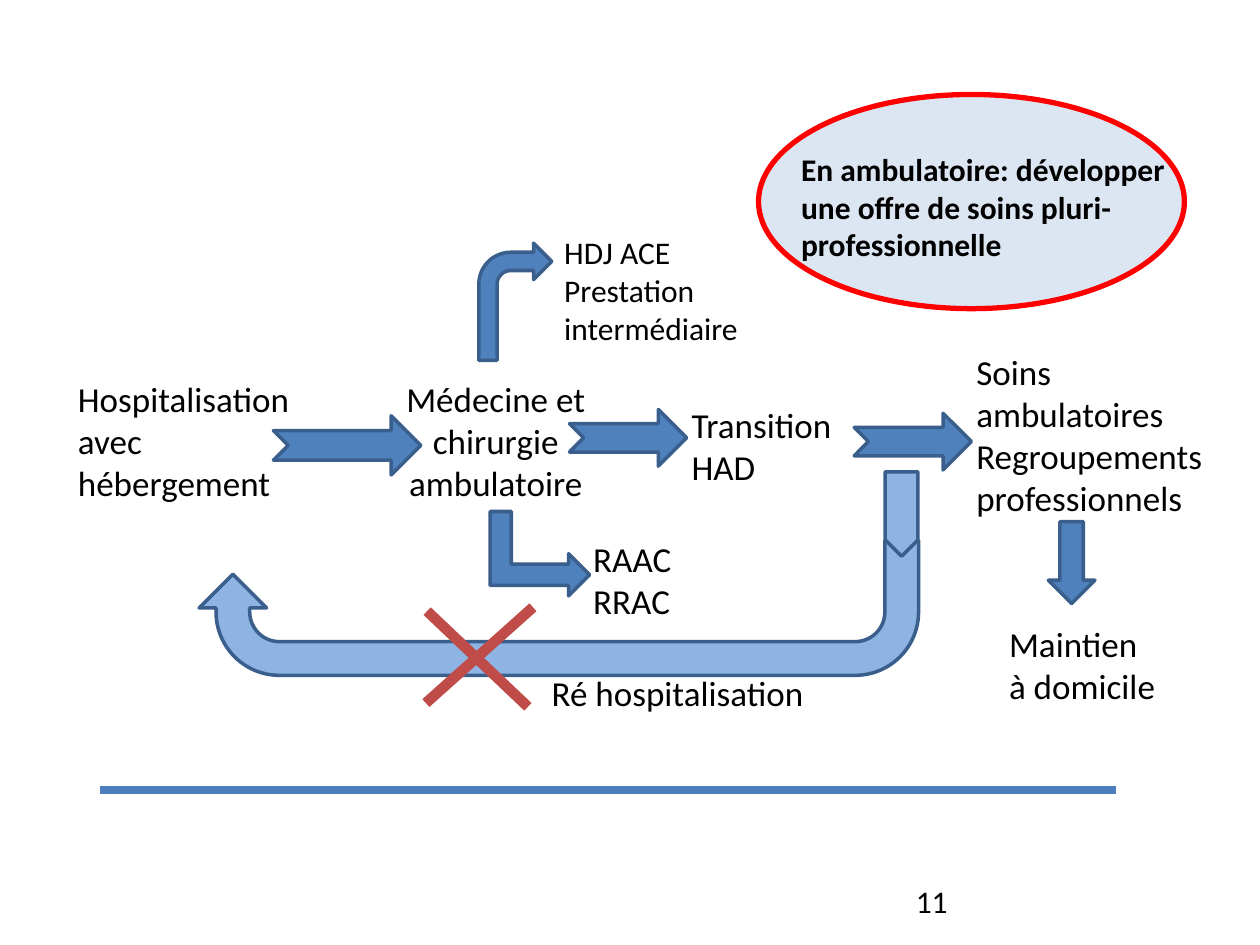
from typing import NamedTuple

from lxml.etree import SubElement
from pptx import Presentation
from pptx.dml.color import RGBColor
from pptx.enum.shapes import MSO_CONNECTOR as CONN, MSO_SHAPE as SHAPE
from pptx.enum.text import PP_ALIGN as ALIGN
from pptx.oxml.ns import qn
from pptx.util import Inches, Pt

BLUE, LIGHT, OUTLINE, RED = "4F81BD", "8EB4E3", "3A5F8C", "BF4C48"


class Block(NamedTuple):
    left: float
    top: float
    width: float
    height: float
    kind: SHAPE
    fill: str = BLUE
    line: str = OUTLINE
    weight: float = 2
    rotation: float = 0
    adjustments: tuple = ()


class Label(NamedTuple):
    left: float
    top: float
    width: float
    height: float
    text: str
    style: dict = {}


class Line(NamedTuple):
    x1: float
    y1: float
    x2: float
    y2: float
    color: str
    weight: float


BLOCKS = [
    Block(2.17, 3.3, 1.17, 0.47, SHAPE.NOTCHED_RIGHT_ARROW),
    Block(4.52, 3.25, 0.93, 0.45, SHAPE.NOTCHED_RIGHT_ARROW),
    Block(6.78, 3.28, 0.93, 0.45, SHAPE.NOTCHED_RIGHT_ARROW),
    Block(3.8, 1.93, 0.58, 0.93, SHAPE.BENT_ARROW),
    Block(3.95, 4, 0.67, 0.79, SHAPE.BENT_UP_ARROW, rotation=90),
    Block(8.32, 4.14, 0.37, 0.65, SHAPE.DOWN_ARROW),
    Block(1.58, 4.29, 5.71, 1.07, SHAPE.U_TURN_ARROW, LIGHT, rotation=180,
          adjustments=(0.25, 0.25, 0.25, 0.47, 0.75)),
    Block(6.82, 3.95, 0.67, 0.26, SHAPE.PENTAGON, LIGHT, rotation=90),
    Block(6.02, 0.75, 3.38, 1.7, SHAPE.OVAL, "DCE6F2", "FF0000", 3),
]

LINES = [
    Line(0.79, 6.27, 8.86, 6.27, "4B7EBC", 4.5),
    Line(3.38, 5.58, 4.23, 4.82, RED, 6),
    Line(4.19, 5.61, 3.39, 4.85, RED, 6),
]

LABELS = [
    Label(0.52, 2.95, 1.96, 1.11, "Hospitalisation avec hébergement"),
    Label(3.1, 2.95, 1.67, 1.11, "Médecine et\nchirurgie ambulatoire",
          {"align": ALIGN.CENTER}),
    Label(5.39, 3.15, 1.54, 0.77, "Transition HAD"),
    Label(7.65, 2.73, 2.08, 1.45,
          "Soins ambulatoires Regroupements professionnels"),
    Label(4.38, 1.8, 1.64, 1.01, "HDJ ACE\nPrestation\nintermédiaire",
          {"size": 18}),
    Label(4.61, 4.22, 0.88, 0.77, "RAAC\nRRAC"),
    Label(4.28, 5.28, 2.22, 0.44, "Ré hospitalisation", {"wrap": False}),
    Label(7.91, 4.89, 1.41, 0.77, "Maintien\và domicile"),
    Label(6.26, 1.14, 3.24, 1.01,
          "En ambulatoire: développer une offre de soins pluri-professionnelle",
          {"size": 18, "bold": True}),
    Label(7.17, 6.95, 2.33, 0.4, "11", {"size": 18}),
]


def rgb(color: str) -> RGBColor:
    return RGBColor.from_string(color)


def write(tf, text: str, size: float = 20, bold: bool = False,
          color: str = "000000", align: ALIGN = ALIGN.LEFT,
          wrap: bool = True) -> None:
    tf.word_wrap = wrap
    for i, line in enumerate(text.split("\n")):
        p = tf.add_paragraph() if i else tf.paragraphs[0]
        p.text = line
        p.alignment = align
        for r in p.runs:
            r.font.name = "Calibri"
            r.font.size = Pt(size)
            r.font.bold = bold
            r.font.color.rgb = rgb(color)


def draw_block(s, b: Block) -> None:
    sp = s.shapes.add_shape(b.kind, *map(Inches, b[:4]))
    sp.shadow.inherit = False
    sp.rotation = b.rotation
    sp.fill.solid()
    sp.fill.fore_color.rgb = rgb(b.fill)
    sp.line.color.rgb = rgb(b.line)
    sp.line.width = Pt(b.weight)
    for i, value in enumerate(b.adjustments):
        sp.adjustments[i] = value


def draw_line(s, ln: Line) -> None:
    cx = s.shapes.add_connector(CONN.STRAIGHT, *map(Inches, ln[:4]))
    cx.line.color.rgb = rgb(ln.color)
    cx.line.width = Pt(ln.weight)
    SubElement(cx._element.spPr, qn("a:effectLst"))


def draw_label(s, label: Label) -> None:
    box = s.shapes.add_textbox(*map(Inches, label[:4]))
    write(box.text_frame, label.text, **label.style)


def main() -> None:
    prs = Presentation()
    prs.slide_width, prs.slide_height = Inches(10), Inches(7.5)
    s = prs.slides.add_slide(prs.slide_layouts[6])
    for block in BLOCKS:
        draw_block(s, block)
    for line in LINES:
        draw_line(s, line)
    for label in LABELS:
        draw_label(s, label)
    prs.save("out.pptx")


if __name__ == "__main__":
    main()
